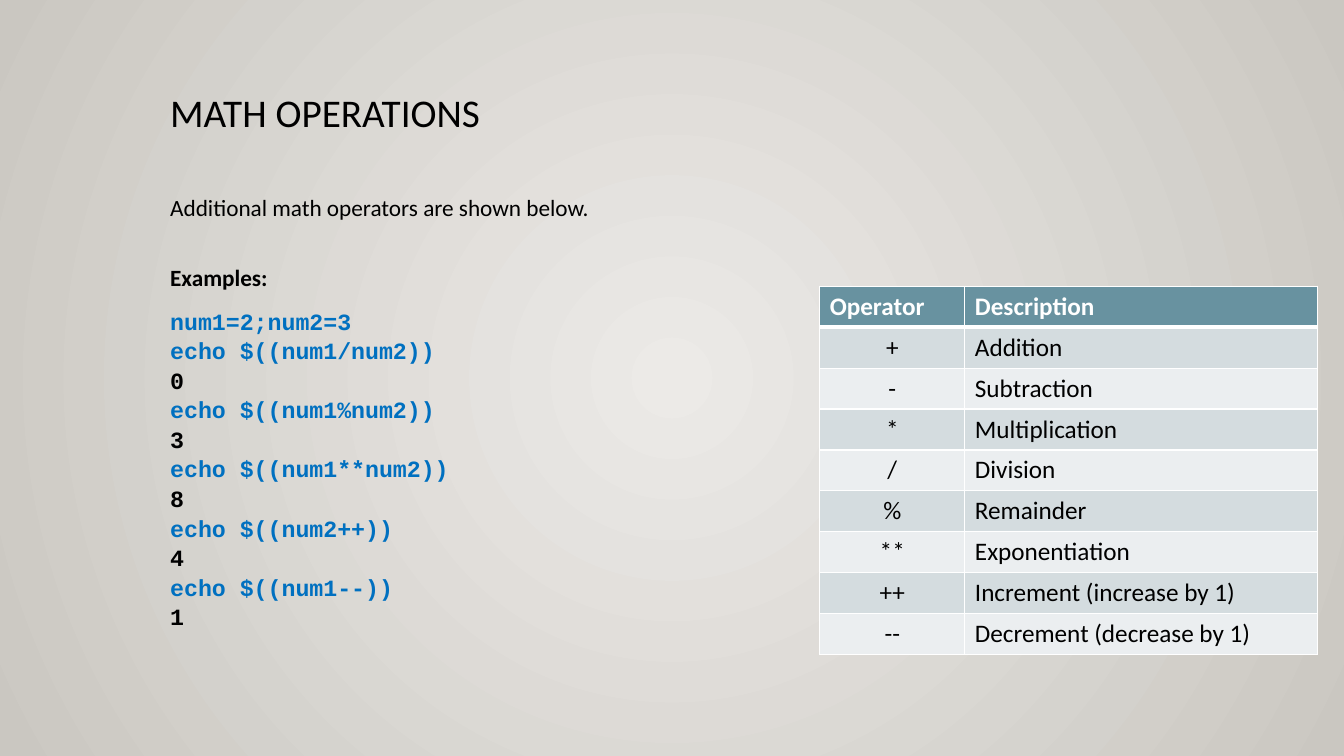
from copy import deepcopy

from lxml.etree import SubElement
from pptx import Presentation
from pptx.dml.color import RGBColor
from pptx.enum.text import PP_ALIGN
from pptx.oxml.ns import qn
from pptx.util import Inches, Pt

WIDTH, HEIGHT = 13.33, 7.5
SANS, MONO = "Calibri", "Courier New"
BLACK, WHITE, BLUE = "000000", "FFFFFF", "0070C0"
GRADIENT = ("ECEAE7", "CAC7C1")
HEADER_FILL, BANDS = "6892A0", ("D4DCDF", "EBEEF0")

TITLE = "MATH OPERATIONS"
INTRO = "Additional math operators are shown below."
EXAMPLES = "Examples:"
CODE = [
    ("num1=2;num2=3", BLUE),
    ("echo $((num1/num2))", BLUE), ("0", BLACK),
    ("echo $((num1%num2))", BLUE), ("3", BLACK),
    ("echo $((num1**num2))", BLUE), ("8", BLACK),
    ("echo $((num2++))", BLUE), ("4", BLACK),
    ("echo $((num1--))", BLUE), ("1", BLACK),
]
OPERATORS = [
    ("Operator", "Description"),
    ("+", "Addition"),
    ("-", "Subtraction"),
    ("*", "Multiplication"),
    ("/", "Division"),
    ("%", "Remainder"),
    ("**", "Exponentiation"),
    ("++", "Increment (increase by 1)"),
    ("--", "Decrement (decrease by 1)"),
]

LEFT = 1.59
TITLE_BOX = (LEFT, 0.88, 10.5, 1.15)
BODY_BOX = (LEFT, 1.87, 5.97, 5.2)
TABLE_AT = (8.13, 2.84)
COLUMNS, ROW_HEIGHT = (1.44, 3.5), 0.406
BODY_SIZE = 16.6


def rgb(value):
    return RGBColor.from_string(value)


def add_run(p, text, size, color=BLACK, name=SANS, bold=False):
    r = p.add_run()
    r.text = text
    for key, value in {"size": Pt(size), "name": name, "bold": bold}.items():
        setattr(r.font, key, value)
    r.font.color.rgb = rgb(color)
    return r


def add_text_frame(s, box):
    tf = s.shapes.add_textbox(*map(Inches, box)).text_frame
    tf.word_wrap = True
    return tf


def set_background(s):
    """Fill the background with a gradient that spreads from the centre."""
    fill = s.background.fill
    fill.gradient()
    for stop, color in zip(fill.gradient_stops, GRADIENT):
        stop.color.rgb = rgb(color)
    lin = s.element.find(".//" + qn("a:lin"))
    grad = lin.getparent()
    grad.remove(lin)
    path = SubElement(grad, qn("a:path"), path="circle")
    SubElement(path, qn("a:fillToRect"), dict.fromkeys("ltrb", "50000"))


def add_body(s):
    tf = add_text_frame(s, BODY_BOX)
    add_run(tf.paragraphs[0], INTRO, BODY_SIZE)
    p = tf.add_paragraph()
    p.space_before = Pt(30)
    add_run(p, EXAMPLES, BODY_SIZE, bold=True)
    p = tf.add_paragraph()
    p.space_before, p.line_spacing = Pt(10), 1.06
    for i, (line, color) in enumerate(CODE):
        if i:
            p.add_line_break()
            p._p[-1].append(deepcopy(r.font._element))
        r = add_run(p, line, BODY_SIZE, color, MONO, bold=True)


def set_borders(cell, widths):
    """Draw white borders; widths maps a side (L, R, T, B) to points."""
    tcPr = cell._tc.get_or_add_tcPr()
    for i, (side, width) in enumerate(widths.items()):
        ln = tcPr.makeelement(qn("a:ln" + side), {"w": str(Pt(width))})
        solid = SubElement(ln, qn("a:solidFill"))
        SubElement(solid, qn("a:srgbClr"), val=WHITE)
        tcPr.insert(i, ln)


def add_operator_table(s):
    n = len(OPERATORS)
    box = (*TABLE_AT, sum(COLUMNS), n * ROW_HEIGHT)
    table = s.shapes.add_table(n, len(COLUMNS), *map(Inches, box)).table
    for column, width in zip(table.columns, COLUMNS):
        column.width = Inches(width)
    for i, row in enumerate(OPERATORS):
        head = i == 0
        table.rows[i].height = Inches(ROW_HEIGHT)
        for j, text in enumerate(row):
            cell = table.cell(i, j)
            cell.fill.solid()
            cell.fill.fore_color.rgb = rgb(HEADER_FILL if head else BANDS[(i - 1) % 2])
            p = cell.text_frame.paragraphs[0]
            if j == 0 and not head:
                p.alignment = PP_ALIGN.CENTER
            add_run(p, text, 18, WHITE if head else BLACK, bold=head)
            set_borders(cell, {"L": 1, "R": 1, "T": 3 if i == 1 else 1,
                               "B": 3 if head else 1})


def main():
    prs = Presentation()
    prs.slide_width, prs.slide_height = Inches(WIDTH), Inches(HEIGHT)
    s = prs.slides.add_slide(prs.slide_layouts[6])
    set_background(s)
    p = add_text_frame(s, TITLE_BOX).paragraphs[0]
    p.line_spacing = 0.9
    add_run(p, TITLE, 28)
    add_body(s)
    add_operator_table(s)
    prs.save("out.pptx")


if __name__ == "__main__":
    main()
